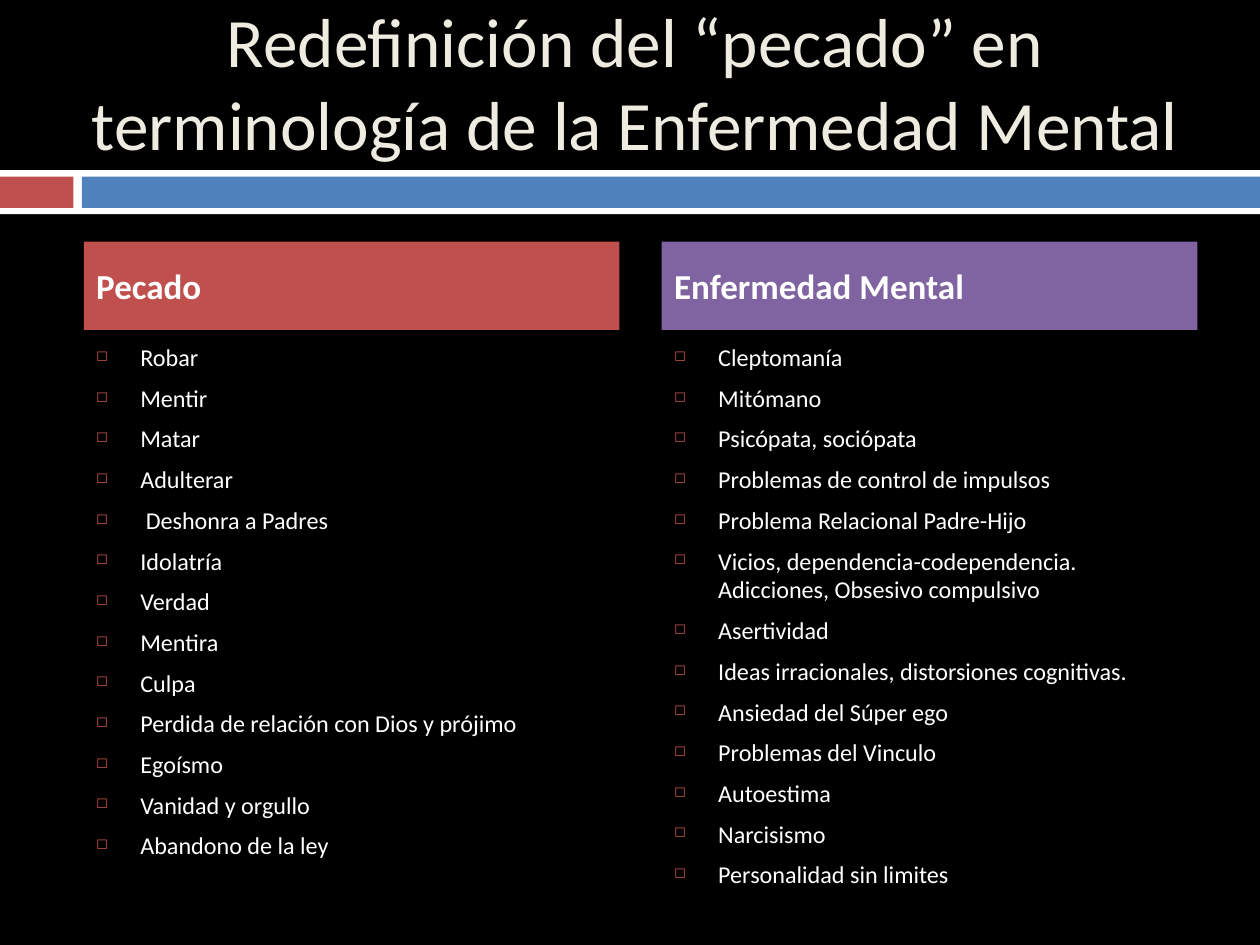
"""Build a slide that pairs sins with their mental illness terms."""
from dataclasses import dataclass

from lxml.etree import SubElement
from pptx import Presentation
from pptx.dml.color import RGBColor
from pptx.enum.shapes import MSO_SHAPE as Shape
from pptx.enum.text import MSO_ANCHOR as Anchor, MSO_AUTO_SIZE as AutoSize, PP_ALIGN as Align
from pptx.oxml.ns import qn
from pptx.util import Cm, Pt

FONT = "Calibri"
COLORS = {
    "background": "000000",
    "white": "FFFFFF",
    "cream": "EEECE1",
    "red": "C0504D",
    "blue": "4F81BD",
    "purple": "8064A2",
}
TITLE = "Redefinición del “pecado” en terminología de la Enfermedad Mental"
COLUMN_WIDTH = 10.8
SPACE_BEFORE = Pt(6.7)


@dataclass(frozen=True)
class Bar:
    left: float
    top: float
    width: float
    height: float
    color: str


@dataclass(frozen=True)
class Column:
    left: float
    color: str
    heading: str
    items: tuple[str, ...]


BARS = (
    Bar(0, 3.43, 25.4, 0.89, "white"),
    Bar(0, 3.56, 1.48, 0.63, "red"),
    Bar(1.65, 3.56, 23.75, 0.63, "blue"),
)
COLUMNS = (
    Column(1.69, "red", "Pecado", (
        "Robar",
        "Mentir",
        "Matar",
        "Adulterar",
        " Deshonra a Padres",
        "Idolatría",
        "Verdad",
        "Mentira",
        "Culpa",
        "Perdida de relación con Dios y prójimo",
        "Egoísmo",
        "Vanidad y orgullo",
        "Abandono de la ley",
    )),
    Column(13.34, "purple", "Enfermedad Mental", (
        "Cleptomanía",
        "Mitómano",
        "Psicópata, sociópata",
        "Problemas de control de impulsos",
        "Problema Relacional Padre-Hijo",
        "Vicios, dependencia-codependencia. Adicciones, Obsesivo compulsivo",
        "Asertividad",
        "Ideas irracionales, distorsiones cognitivas.",
        "Ansiedad del Súper ego",
        "Problemas del Vinculo",
        "Autoestima",
        "Narcisismo",
        "Personalidad sin limites",
    )),
)


def rgb(name: str) -> RGBColor:
    """Return a named colour."""
    return RGBColor.from_string(COLORS[name])


def style(paragraph, size: float, color: str, align: Align = Align.LEFT, bold: bool = False) -> None:
    """Set the font and alignment of a paragraph."""
    paragraph.alignment = align
    paragraph.font.name = FONT
    paragraph.font.size = Pt(size)
    paragraph.font.bold = bold
    paragraph.font.color.rgb = rgb(color)


def add_bullet(paragraph) -> None:
    """Give a paragraph a small red square with a hanging indent."""
    properties = paragraph._p.get_or_add_pPr()
    properties.set("marL", str(Cm(0.89)))
    properties.set("indent", str(-Cm(0.89)))
    SubElement(SubElement(properties, qn("a:buClr")), qn("a:srgbClr"), val=COLORS["red"])
    SubElement(properties, qn("a:buSzPct"), val="60000")
    SubElement(properties, qn("a:buChar"), char="◻")


def add_bar(slide, bar: Bar):
    """Draw a plain filled rectangle."""
    shape = slide.shapes.add_shape(
        Shape.RECTANGLE, Cm(bar.left), Cm(bar.top), Cm(bar.width), Cm(bar.height))
    shape.shadow.inherit = False
    shape.fill.solid()
    shape.fill.fore_color.rgb = rgb(bar.color)
    shape.line.fill.background()
    return shape


def set_title(slide) -> None:
    """Place and format the title."""
    title = slide.shapes.title
    title.left, title.top, title.width, title.height = Cm(1.48), Cm(0.43), Cm(22.65), Cm(2.41)
    frame = title.text_frame
    frame.text = TITLE
    frame.word_wrap = True
    frame.auto_size = AutoSize.NONE
    frame.vertical_anchor = Anchor.MIDDLE
    style(frame.paragraphs[0], 39.6, "cream", Align.CENTER)


def add_column(slide, column: Column) -> None:
    """Draw a coloured heading with its bulleted list below."""
    heading = add_bar(slide, Bar(column.left, 4.87, COLUMN_WIDTH, 1.78, column.color))
    heading.text_frame.text = column.heading
    heading.text_frame.vertical_anchor = Anchor.MIDDLE
    paragraph = heading.text_frame.paragraphs[0]
    paragraph.space_before = SPACE_BEFORE
    style(paragraph, 20, "white", bold=True)

    box = slide.shapes.add_textbox(Cm(column.left), Cm(6.78), Cm(COLUMN_WIDTH), Cm(9.96))
    frame = box.text_frame
    frame.word_wrap = True
    frame.text = "\n".join(column.items)
    for paragraph in frame.paragraphs:
        paragraph.space_before = SPACE_BEFORE
        style(paragraph, 13.8, "white")
        add_bullet(paragraph)


def main() -> None:
    """Build and save the presentation."""
    presentation = Presentation()
    presentation.slide_width, presentation.slide_height = Cm(25.4), Cm(19.05)
    slide = presentation.slides.add_slide(presentation.slide_layouts[5])
    slide.background.fill.solid()
    slide.background.fill.fore_color.rgb = rgb("background")
    for bar in BARS:
        add_bar(slide, bar)
    set_title(slide)
    for column in COLUMNS:
        add_column(slide, column)
    presentation.save("out.pptx")


if __name__ == "__main__":
    main()
